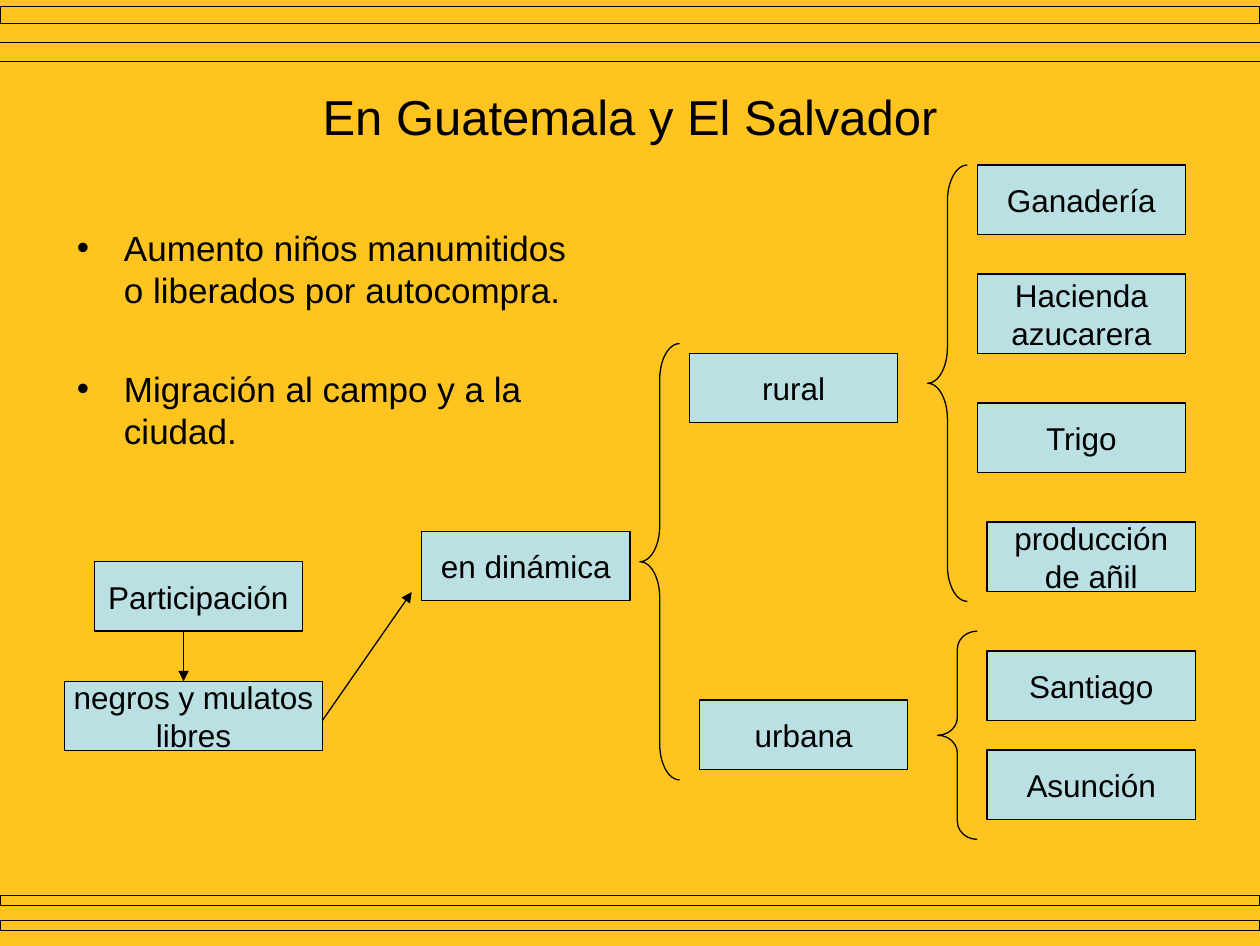
from dataclasses import dataclass

from lxml.etree import SubElement
from pptx import Presentation
from pptx.dml.color import RGBColor
from pptx.enum.shapes import MSO_CONNECTOR, MSO_SHAPE
from pptx.enum.text import MSO_ANCHOR, PP_ALIGN
from pptx.oxml.ns import qn
from pptx.util import Cm, Pt


@dataclass(frozen=True)
class Theme:
    background: RGBColor = RGBColor(0xFF, 0xC4, 0x1F)
    box: RGBColor = RGBColor(0xBB, 0xE0, 0xE3)
    ink: RGBColor = RGBColor(0, 0, 0)
    font: str = "Arial"
    title_size: int = 28
    list_size: int = 20
    box_size: int = 18
    line_width: float = 0.75


class SlideBuilder:
    """Draws styled elements on one slide; all lengths are centimetres."""

    def __init__(self, slide, theme):
        self.slide = slide
        self.theme = theme
        slide.background.fill.solid()
        slide.background.fill.fore_color.rgb = theme.background

    def style_font(self, paragraph, size):
        paragraph.font.name = self.theme.font
        paragraph.font.size = Pt(size)
        paragraph.font.color.rgb = self.theme.ink

    def style_line(self, line):
        line.color.rgb = self.theme.ink
        line.width = Pt(self.theme.line_width)

    def clear_margins(self, frame, anchor):
        frame.margin_left = frame.margin_right = 0
        frame.margin_top = frame.margin_bottom = 0
        frame.vertical_anchor = anchor
        frame.word_wrap = True

    def title(self, text, left, top, width, height):
        shape = self.slide.shapes.title
        shape.left, shape.top = Cm(left), Cm(top)
        shape.width, shape.height = Cm(width), Cm(height)
        self.clear_margins(shape.text_frame, MSO_ANCHOR.MIDDLE)
        shape.text_frame.text = text
        paragraph = shape.text_frame.paragraphs[0]
        paragraph.alignment = PP_ALIGN.CENTER
        self.style_font(paragraph, self.theme.title_size)

    def bullets(self, items, left, top, width, height):
        shape = self.slide.shapes.add_textbox(Cm(left), Cm(top), Cm(width), Cm(height))
        frame = shape.text_frame
        self.clear_margins(frame, MSO_ANCHOR.TOP)
        for index, item in enumerate(items):
            paragraph = frame.add_paragraph() if index else frame.paragraphs[0]
            paragraph.text = item
            paragraph.line_spacing = Pt(24)
            if index:
                paragraph.space_before = Pt(32.5)
            properties = paragraph._p.get_or_add_pPr()
            properties.set("marL", str(Cm(1)))
            properties.set("indent", str(-Cm(0.95)))
            SubElement(properties, qn("a:buFont"), typeface=self.theme.font)
            SubElement(properties, qn("a:buChar"), char="•")
            self.style_font(paragraph, self.theme.list_size)

    def outline(self, kind, left, top, width, height):
        """Add an unfilled preset shape with a thin line."""
        shape = self.slide.shapes.add_shape(kind, Cm(left), Cm(top), Cm(width), Cm(height))
        shape.shadow.inherit = False
        shape.fill.background()
        self.style_line(shape.line)
        return shape

    def box(self, text, left, top, width=4.2, height=1.4):
        shape = self.outline(MSO_SHAPE.RECTANGLE, left, top, width, height)
        shape.fill.solid()
        shape.fill.fore_color.rgb = self.theme.box
        self.clear_margins(shape.text_frame, MSO_ANCHOR.MIDDLE)
        shape.text_frame.text = text
        paragraph = shape.text_frame.paragraphs[0]
        paragraph.alignment = PP_ALIGN.CENTER
        self.style_font(paragraph, self.theme.box_size)

    def brace(self, left, top, height, curve):
        shape = self.outline(MSO_SHAPE.LEFT_BRACE, left, top, 0.8, height)
        shape.adjustments[0] = curve

    def line(self, start, end, arrow=False):
        connector = self.slide.shapes.add_connector(
            MSO_CONNECTOR.STRAIGHT, *map(Cm, start), *map(Cm, end))
        self.style_line(connector.line)
        if arrow:
            SubElement(connector.line._get_or_add_ln(), qn("a:tailEnd"), type="triangle")
        SubElement(connector._element.spPr, qn("a:effectLst"))


SLIDE_WIDTH, SLIDE_HEIGHT = 25.4, 19.08

BANDS = [(0.13, 0.35), (18.06, 0.2), (18.57, 0.2)]
RULES = [0.86, 1.24]

BOXES = [
    ("Participación", 1.9, 11.33),
    ("en dinámica", 8.5, 10.72),
    ("rural", 13.9, 7.13),
    ("urbana", 14.1, 14.12),
    ("Ganadería", 19.7, 3.33),
    ("Hacienda\vazucarera", 19.7, 5.53, 4.2, 1.6),
    ("Trigo", 19.7, 8.13),
    ("producción\vde añil", 19.9, 10.53),
    ("Santiago", 19.9, 13.13),
    ("Asunción", 19.9, 15.13),
    ("negros y mulatos\vlibres", 1.3, 13.74, 5.2),
]

BRACES = [(12.9, 6.93, 8.8, 0.9), (18.7, 3.33, 8.8, 0.9), (18.9, 12.73, 4.2, 0.45)]

ARROWS = [((3.7, 12.73), (3.7, 13.74)), ((6.5, 14.53), (8.3, 11.94))]


def main():
    presentation = Presentation()
    presentation.slide_width = Cm(SLIDE_WIDTH)
    presentation.slide_height = Cm(SLIDE_HEIGHT)
    slide = presentation.slides.add_slide(presentation.slide_layouts[5])
    builder = SlideBuilder(slide, Theme())

    for top, height in BANDS:
        builder.outline(MSO_SHAPE.RECTANGLE, 0, top, SLIDE_WIDTH, height)
    for top in RULES:
        builder.line((0, top), (SLIDE_WIDTH, top))

    builder.title("En Guatemala y El Salvador", 1.6, 1.14, 22.2, 2.4)
    builder.bullets(
        ["Aumento niños manumitidos o liberados por autocompra.",
         "Migración al campo y a la ciudad."],
        1.5, 4.57, 10.5, 4.6)

    for box in BOXES:
        builder.box(*box)
    for brace in BRACES:
        builder.brace(*brace)
    for start, end in ARROWS:
        builder.line(start, end, arrow=True)

    presentation.save("out.pptx")


if __name__ == "__main__":
    main()
